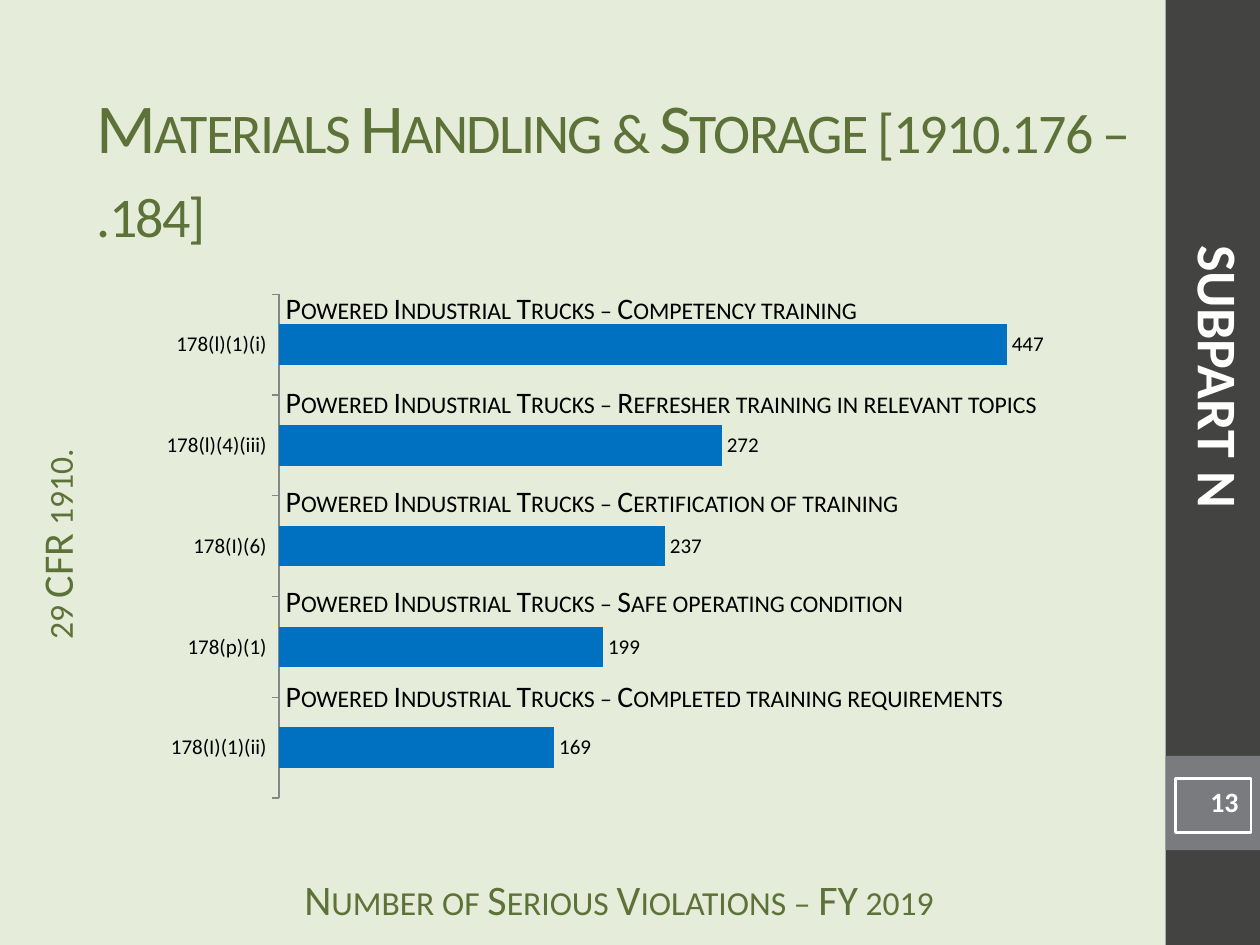
import pptx
import pptx.chart.data
import pptx.dml.color
import pptx.enum.chart
import pptx.enum.shapes
import pptx.enum.text
import pptx.oxml
import pptx.oxml.ns
import pptx.util

Cm, Pt = pptx.util.Cm, pptx.util.Pt
ALIGN = pptx.enum.text.PP_ALIGN
ANCHOR = pptx.enum.text.MSO_ANCHOR

FONT = "Calibri"
GREEN, BLACK, WHITE, BLUE = "5D7238", "000000", "FFFFFF", "0070C0"
PALE, DARK, GRAY, AXIS = "E5ECD9", "434342", "797B7E", "868686"

TITLE = "Materials Handling & Storage [1910.176 – .184]"
SIDE = "29 CFR 1910."
BASE = "Number of Serious Violations – FY 2019"
PART = "SUBPART N"
PAGE = "13"
TOPIC = "Powered Industrial Trucks – "

# code, violations, wording, top and width of the wording (cm); lowest bar first
ROWS = [
    ("178(I)(1)(ii)", 169, "Completed training requirements", 13.54, 15.37),
    ("178(p)(1)", 199, "Safe operating condition", 11.63, 13.31),
    ("178(I)(6)", 237, "Certification of training", 9.6, 13.23),
    ("178(l)(4)(iii)", 272, "Refresher training in relevant topics", 7.62, 16.33),
    ("178(l)(1)(i)", 447, "Competency training", 5.72, 12.57),
]
PLOT = {"x": 0.137, "y": 0.02, "w": 0.843, "h": 0.96}


def tint(code):
    return pptx.dml.color.RGBColor.from_string(code)


def box(slide, place, fill=None, line=None):
    shape = slide.shapes.add_shape(
        pptx.enum.shapes.MSO_SHAPE.RECTANGLE, *map(Cm, place))
    shape.shadow.inherit = False
    if fill:
        shape.fill.solid()
        shape.fill.fore_color.rgb = tint(fill)
    else:
        shape.fill.background()
    if line:
        shape.line.color.rgb = tint(line)
        shape.line.width = Pt(1.5)
    else:
        shape.line.fill.background()
    return shape


def write(shape, text, size, color, align=ALIGN.LEFT, anchor=ANCHOR.TOP,
          bold=False, small=False, space=None, wrap=True, top=None):
    frame = shape.text_frame
    frame.word_wrap = wrap
    frame.vertical_anchor = anchor
    if top is not None:
        frame.margin_top = Cm(top)
    para = frame.paragraphs[0]
    para.alignment = align
    run = para.add_run()
    run.text = text
    font = run.font
    font.name, font.size, font.bold = FONT, Pt(size), bold
    font.color.rgb = tint(color)
    props = run._r.get_or_add_rPr()
    if small:
        props.set("cap", "small")
    if space:
        props.set("spc", str(space))


def label(slide, place, text, size, color, turn=0, **style):
    shape = slide.shapes.add_textbox(*map(Cm, place))
    shape.rotation = turn
    write(shape, text, size, color, **style)


def graph(slide):
    data = pptx.chart.data.CategoryChartData()
    data.categories = [row[0] for row in ROWS]
    data.add_series("Series 1", [row[1] for row in ROWS])
    kind = pptx.enum.chart.XL_CHART_TYPE.BAR_CLUSTERED
    place = map(Cm, (2.96, 5.72, 19.47, 10.58))
    chart = slide.shapes.add_chart(kind, *place, data).chart
    chart.has_legend = chart.has_title = False
    chart.font.name, chart.font.size = FONT, Pt(10)
    chart.font.color.rgb = tint(BLACK)

    cats, vals = chart.category_axis, chart.value_axis
    cats.tick_labels.font.size = Pt(12)
    cats.major_tick_mark = pptx.enum.chart.XL_TICK_MARK.OUTSIDE
    cats.format.line.color.rgb = tint(AXIS)
    cats.has_major_gridlines = vals.has_major_gridlines = False
    vals.minimum_scale, vals.maximum_scale = 0, 500
    vals.visible = False

    plot = chart.plots[0]
    plot.gap_width = 150
    plot.vary_by_categories = False
    fill = plot.series[0].format.fill
    fill.solid()
    fill.fore_color.rgb = tint(BLUE)
    plot.has_data_labels = True
    marks = plot.data_labels
    marks.show_value = True
    marks.position = pptx.enum.chart.XL_LABEL_POSITION.OUTSIDE_END
    marks.font.size = Pt(12)
    marks.font.color.rgb = tint(BLACK)
    fix(chart)


def fix(chart):
    """Pin the inner plot area to PLOT, in shares of the chart."""
    area = chart._chartSpace.chart.plotArea
    for old in area.findall(pptx.oxml.ns.qn("c:layout")):
        area.remove(old)
    modes = "".join(f'<c:{k}Mode val="edge"/>' for k in "xy")
    sizes = "".join(f'<c:{k} val="{v}"/>' for k, v in PLOT.items())
    area.insert(0, pptx.oxml.parse_xml(
        f'<c:layout {pptx.oxml.ns.nsdecls("c")}><c:manualLayout>'
        f'<c:layoutTarget val="inner"/>{modes}{sizes}'
        f'</c:manualLayout></c:layout>'))


def main():
    deck = pptx.Presentation()
    deck.slide_width, deck.slide_height = Cm(25.4), Cm(19.05)
    slide = deck.slides.add_slide(deck.slide_layouts[6])
    back = slide.background.fill
    back.solid()
    back.fore_color.rgb = tint(PALE)

    box(slide, (23.5, 0, 1.9, 19.05), DARK)
    box(slide, (23.5, 15.24, 1.9, 1.9), GRAY)
    axis = dict(align=ALIGN.CENTER, small=True, top=0)
    label(slide, (5.28, 17.6, 14.4, 0.84), BASE, 24, GREEN, **axis)
    label(slide, (-3.96, 10.24, 10.64, 1.47), SIDE, 24, GREEN, 270, **axis)
    graph(slide)
    label(slide, (1.7, 1.47, 21.74, 3.81), TITLE, 40, GREEN,
          anchor=ANCHOR.MIDDLE, small=True, space=-100)
    page = box(slide, (23.7, 15.7, 1.52, 1.09), line=WHITE)
    write(page, PAGE, 16, WHITE, align=ALIGN.RIGHT, bold=True)
    label(slide, (16.99, 6.78, 15.19, 1.63), PART, 32, WHITE, 90,
          align=ALIGN.CENTER, bold=True)
    for _, _, words, top, width in reversed(ROWS):
        label(slide, (5.51, top, width, 0.99), TOPIC + words, 17, BLACK,
              small=True, wrap=False)
    deck.save("out.pptx")


if __name__ == "__main__":
    main()
